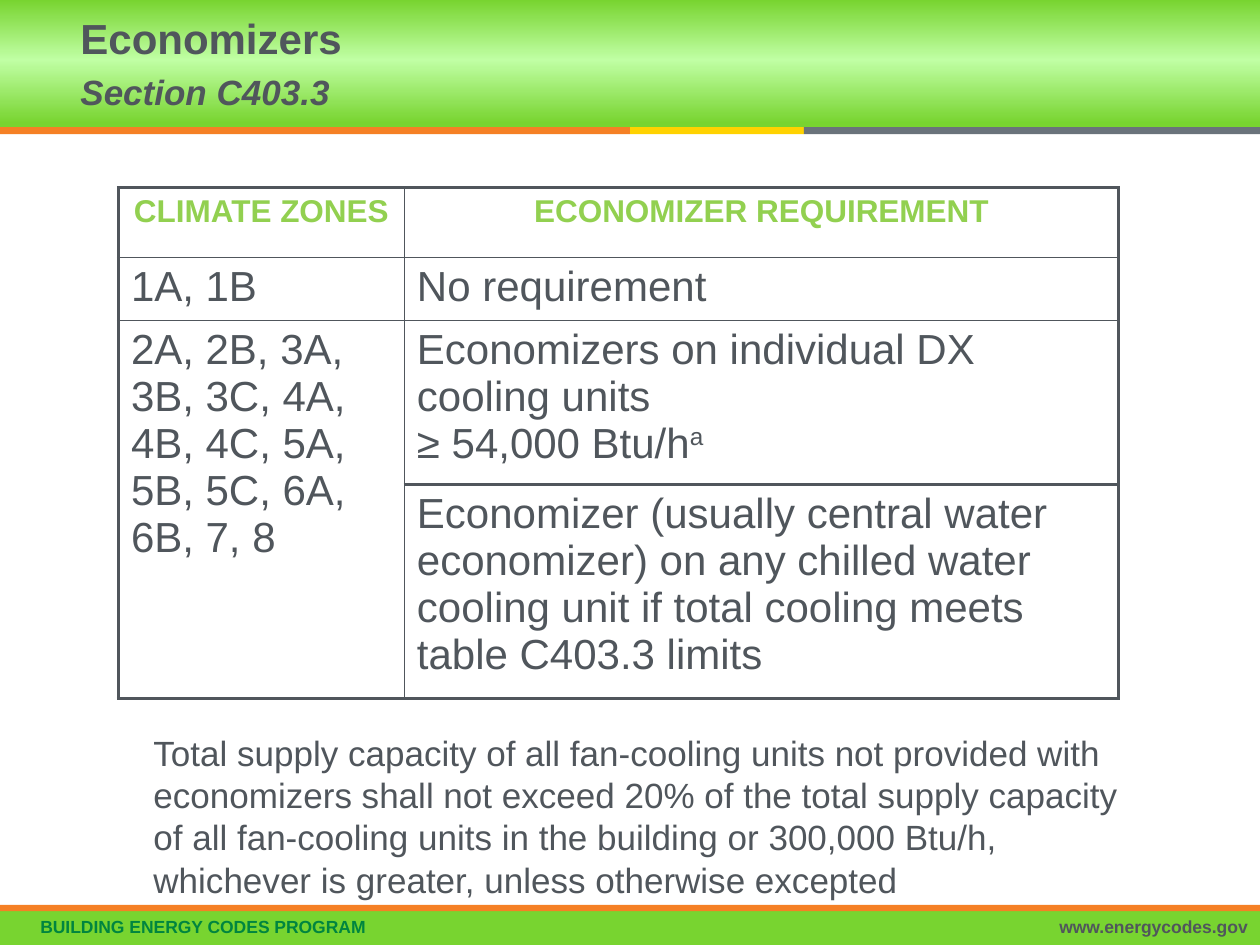
"""Build the slide on economizer requirements by climate zone."""
from copy import deepcopy

from lxml import etree
from pptx import Presentation
from pptx.dml.color import RGBColor
from pptx.enum.shapes import MSO_SHAPE
from pptx.enum.text import MSO_ANCHOR, PP_ALIGN
from pptx.oxml.ns import qn
from pptx.util import Pt

RECTANGLE = MSO_SHAPE.RECTANGLE
MIDDLE = MSO_ANCHOR.MIDDLE
LEFT, CENTER, RIGHT = PP_ALIGN.LEFT, PP_ALIGN.CENTER, PP_ALIGN.RIGHT
GRAY, GREEN, ORANGE = "50565C", "78D430", "F58025"
THICK, THIN = Pt(2.25), Pt(1)


def color(value):
    return RGBColor.from_string(value)


def add_run(paragraph, text, size, value=GRAY, bold=False, italic=False):
    run = paragraph.add_run()
    run.text = text
    run.font.name = "Arial"
    run.font.size = Pt(size)
    run.font.bold = bold
    run.font.italic = italic
    run.font.color.rgb = color(value)
    return run


presentation = Presentation()
presentation.slide_width, presentation.slide_height = Pt(720), Pt(540)
slide = presentation.slides.add_slide(presentation.slide_layouts[6])

bands = [
    (0, 0, 720, 72.7, GREEN),
    (0, 520.5, 720, 19.5, GREEN),
    (0, 72.7, 360, 4, ORANGE),
    (360, 72.7, 99.4, 4, "FFD200"),
    (459.4, 72.7, 260.6, 4, "6A737B"),
    (0, 517, 720, 3.7, ORANGE),
]
shapes = []
for left, top, width, height, value in bands:
    shape = slide.shapes.add_shape(RECTANGLE, Pt(left), Pt(top), Pt(width), Pt(height))
    shape.shadow.inherit = False
    shape.fill.solid()
    shape.fill.fore_color.rgb = color(value)
    shape.line.fill.background()
    shapes.append(shape)

header_fill = shapes[0].fill
header_fill.gradient()
header_fill.gradient_angle = 270
stop_list = shapes[0]._element.spPr.find(qn("a:gradFill")).find(qn("a:gsLst"))
stop_list.append(deepcopy(stop_list[0]))
for stop, (position, value) in zip(
    header_fill.gradient_stops, [(0, GREEN), (0.47, "C0FFA4"), (0.97, GREEN)]
):
    stop.position = position
    stop.color.rgb = color(value)

title = slide.shapes.add_textbox(Pt(38.9), Pt(0), Pt(421), Pt(72.7))
title.text_frame.word_wrap = True
title.text_frame.vertical_anchor = MIDDLE
paragraph = title.text_frame.paragraphs[0]
paragraph.line_spacing = Pt(28)
add_run(paragraph, "Economizers", 24, bold=True)
add_run(paragraph, " ", 26)
paragraph.add_line_break()
add_run(paragraph, "Section C403.3", 20, bold=True, italic=True)

footers = [
    (16, 560, LEFT, "BUILDING ENERGY CODES PROGRAM", "00853F"),
    (431.3, 288.7, RIGHT, "www.energycodes.gov", GRAY),
]
for left, width, alignment, text, value in footers:
    footer = slide.shapes.add_textbox(Pt(left), Pt(521.3), Pt(width), Pt(18.7))
    footer.text_frame.word_wrap = True
    paragraph = footer.text_frame.paragraphs[0]
    paragraph.alignment = alignment
    paragraph.line_spacing = 0.9
    add_run(paragraph, text, 10, value, bold=True)

rows = [
    ("CLIMATE ZONES", "ECONOMIZER REQUIREMENT"),
    ("1A, 1B", "No requirement"),
    (
        "2A, 2B, 3A, 3B, 3C, 4A, 4B, 4C, 5A, 5B, 5C, 6A, 6B, 7, 8",
        "Economizers on individual DX cooling units\v≥ 54,000 Btu/h",
    ),
    (
        "",
        "Economizer (usually central water economizer) on any chilled water "
        "cooling unit if total cooling meets table C403.3 limits",
    ),
]
row_heights = [39.9, 34.2, 87.6, 114.2]
column_widths = [163.4, 408.2]
table = slide.shapes.add_table(
    len(rows), 2, Pt(67.7), Pt(107.3), Pt(sum(column_widths)), Pt(sum(row_heights))
).table
table.first_row = False
table.horz_banding = False
for column, width in zip(table.columns, column_widths):
    column.width = Pt(width)
for row, height in zip(table.rows, row_heights):
    row.height = Pt(height)
table.cell(2, 0).merge(table.cell(3, 0))

for row_index, texts in enumerate(rows):
    for column_index, text in enumerate(texts):
        cell = table.cell(row_index, column_index)
        borders = {
            "a:lnL": THIN if column_index else THICK,
            "a:lnR": THICK if column_index else THIN,
            "a:lnT": THICK if row_index in (0, 3) else THIN,
            "a:lnB": THICK if row_index >= 2 else THIN,
        }
        properties = cell._tc.get_or_add_tcPr()
        for tag, width in borders.items():
            border = etree.SubElement(properties, qn(tag), w=str(int(width)))
            fill = etree.SubElement(border, qn("a:solidFill"))
            etree.SubElement(fill, qn("a:srgbClr"), val=GRAY)
        cell.fill.background()
        if cell.is_spanned:
            continue
        paragraph = cell.text_frame.paragraphs[0]
        if row_index == 0:
            paragraph.alignment = CENTER
            add_run(paragraph, text, 18, "92D050", bold=True)
            continue
        for line_index, line in enumerate(text.split("\v")):
            if line_index:
                paragraph.add_line_break()
            add_run(paragraph, line, 24)

footnote_mark = add_run(table.cell(2, 1).text_frame.paragraphs[0], "a", 24)
footnote_mark._r.get_or_add_rPr().set("baseline", "30000")

note = slide.shapes.add_textbox(Pt(80.6), Pt(414.7), Pt(576.7), Pt(104.4))
note.text_frame.word_wrap = True
add_run(
    note.text_frame.paragraphs[0],
    "Total supply capacity of all fan-cooling units not provided with economizers "
    "shall not exceed 20% of the total supply capacity of all fan-cooling units in "
    "the building or 300,000 Btu/h, whichever is greater, unless otherwise excepted",
    20,
)

presentation.save("out.pptx")
